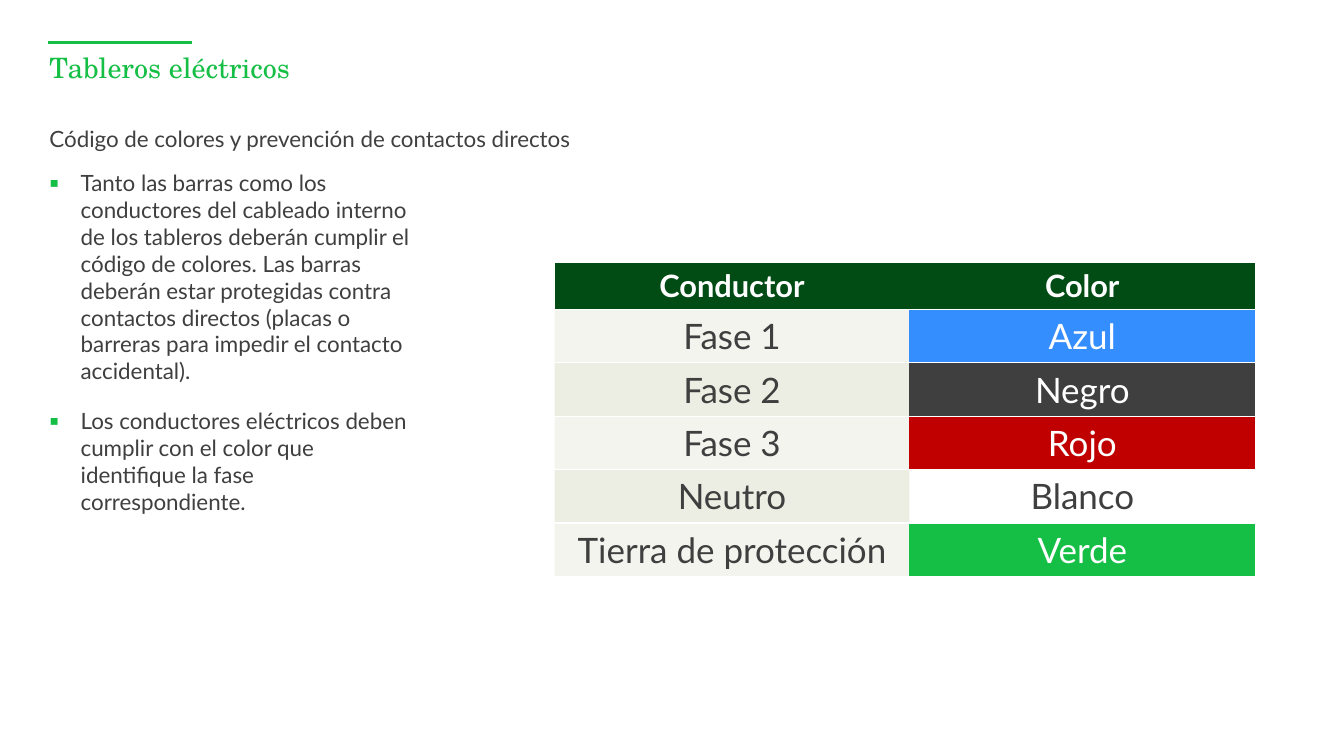
import pptx
import pptx.dml.color
import pptx.enum.shapes
import pptx.enum.text
import pptx.oxml
import pptx.oxml.ns
import pptx.util
from lxml import etree

RGBColor = pptx.dml.color.RGBColor
Inches, Pt = pptx.util.Inches, pptx.util.Pt
PP_ALIGN = pptx.enum.text.PP_ALIGN
ANCHOR = pptx.enum.text.MSO_ANCHOR
qn = pptx.oxml.ns.qn

GREEN = RGBColor(0x15, 0xBF, 0x45)
DARK_GREEN = RGBColor(0x00, 0x4C, 0x14)
SUBTITLE_GRAY = RGBColor(0x40, 0x40, 0x40)
CHARCOAL = RGBColor(0x3F, 0x3F, 0x3F)
WHITE = RGBColor(0xFF, 0xFF, 0xFF)
BLUE = RGBColor(0x34, 0x8E, 0xFE)
RED = RGBColor(0xC0, 0x00, 0x00)
SAND = RGBColor(0xE9, 0xEA, 0xDD)

TITLE = "Tableros eléctricos"
SUBTITLE = "Código de colores y prevención de contactos directos"
RULES = [
    "Tanto las barras como los conductores del cableado interno de los tableros "
    "deberán cumplir el código de colores. Las barras deberán estar protegidas "
    "contra contactos directos (placas o barreras para impedir el contacto accidental).",
    "Los conductores eléctricos deben cumplir con el color que identifique la fase "
    "correspondiente.",
]
HEADINGS = ("Conductor", "Color")
CONDUCTORS = [
    ("Fase 1", "Azul", BLUE),
    ("Fase 2", "Negro", CHARCOAL),
    ("Fase 3", "Rojo", RED),
    ("Neutro", "Blanco", None),
    ("Tierra de protección", "Verde", GREEN),
]

HEAD_FONT, TEXT_FONT = "TeX Gyre Schola", "Lato"
LEFT, TEXT_WIDTH, RULES_WIDTH = 0.49, 10.79, 3.72
TABLE_LEFT, TABLE_TOP = 5.5, 2.6
COLUMN_WIDTHS = (3.52, 3.43)
HEADING_HEIGHT, ROW_HEIGHT = 0.47, 0.53
BAND_OPACITY = (51, 80)


def add_run(paragraph, text, size, color, font=TEXT_FONT, bold=False):
    run = paragraph.add_run()
    run.text = text
    run.font.name, run.font.size, run.font.bold = font, Pt(size), bold
    run.font.color.rgb = color


def place(holder, top, width, height):
    """Position a placeholder at the left margin and return its bare text frame."""
    holder.left, holder.top = Inches(LEFT), Inches(top)
    holder.width, holder.height = Inches(width), Inches(height)
    frame = holder.text_frame
    frame.margin_left = frame.margin_right = frame.margin_top = frame.margin_bottom = 0
    frame.word_wrap = True
    frame.auto_size = pptx.enum.text.MSO_AUTO_SIZE.NONE
    frame.vertical_anchor = ANCHOR.TOP
    return frame


def format_paragraph(paragraph, spacing, before=0):
    paragraph.alignment = PP_ALIGN.LEFT
    paragraph.line_spacing = spacing
    paragraph.space_before = Pt(before)


def set_indent(paragraph, indent):
    properties = paragraph._p.get_or_add_pPr()
    properties.set("marL", str(Inches(indent)))
    properties.set("indent", str(-Inches(indent)))
    return properties


def add_bullet(paragraph):
    properties = set_indent(paragraph, 0.31)
    color = etree.SubElement(properties, qn("a:buClr"))
    etree.SubElement(color, qn("a:srgbClr"), val=str(GREEN))
    etree.SubElement(properties, qn("a:buSzPct"), val="123000")
    etree.SubElement(properties, qn("a:buChar"), char="▪")


def fill_cell(cell, text, size, text_color, fill, opacity=100, bold=False):
    cell.vertical_anchor = ANCHOR.MIDDLE
    cell.margin_left = cell.margin_right = Inches(0.11)
    cell.margin_top = cell.margin_bottom = Inches(0.05)
    properties = cell._tc.get_or_add_tcPr()
    for side in ("a:lnT", "a:lnB"):
        border = etree.SubElement(properties, qn(side), w=str(Pt(1)))
        solid = etree.SubElement(border, qn("a:solidFill"))
        etree.SubElement(solid, qn("a:srgbClr"), val=str(WHITE))
    if fill is None:
        cell.fill.background()
    else:
        cell.fill.solid()
        cell.fill.fore_color.rgb = fill
    if opacity < 100:
        shade = properties.find(qn("a:solidFill")).find(qn("a:srgbClr"))
        etree.SubElement(shade, qn("a:alpha"), val=str(opacity * 1000))
    paragraph = cell.text_frame.paragraphs[0]
    paragraph.alignment = PP_ALIGN.CENTER
    add_run(paragraph, text, size, text_color, bold=bold)


def add_color_table(slide):
    frame = slide.shapes.add_table(
        len(CONDUCTORS) + 1, len(HEADINGS), Inches(TABLE_LEFT), Inches(TABLE_TOP),
        Inches(sum(COLUMN_WIDTHS)),
        Inches(HEADING_HEIGHT + ROW_HEIGHT * len(CONDUCTORS)))
    table = frame.table
    # "No Style, No Grid"
    table._tbl.tblPr.find(qn("a:tableStyleId")).text = "{2D5ABB26-0587-4C30-8999-92F81FD0307C}"
    for column, width in zip(table.columns, COLUMN_WIDTHS):
        column.width = Inches(width)
    for index, row in enumerate(table.rows):
        row.height = Inches(ROW_HEIGHT if index else HEADING_HEIGHT)
    for column, heading in enumerate(HEADINGS):
        fill_cell(table.cell(0, column), heading, 22, WHITE, DARK_GREEN, bold=True)
    for index, (conductor, color_name, color) in enumerate(CONDUCTORS):
        fill_cell(table.cell(index + 1, 0), conductor, 25, CHARCOAL, SAND,
                  BAND_OPACITY[index % 2])
        fill_cell(table.cell(index + 1, 1), color_name, 25,
                  WHITE if color else CHARCOAL, color)


def main():
    deck = pptx.Presentation()
    deck.slide_width, deck.slide_height = Inches(13.33), Inches(7.5)
    slide = deck.slides.add_slide(deck.slide_layouts.get_by_name("Two Content"))
    title, subtitle, rules = slide.placeholders

    accent = slide.shapes.add_connector(
        pptx.enum.shapes.MSO_CONNECTOR.STRAIGHT,
        Inches(0.48), Inches(0.42), Inches(1.9), Inches(0.42))
    accent.line.color.rgb, accent.line.width = GREEN, Pt(1.75)
    etree.SubElement(accent._element.spPr, qn("a:effectLst"))

    heading = place(title, 0.54, TEXT_WIDTH, 0.7).paragraphs[0]
    format_paragraph(heading, 0.9)
    add_run(heading, TITLE, 20, GREEN, HEAD_FONT)

    topic = place(subtitle, 1.27, TEXT_WIDTH, 0.39).paragraphs[0]
    format_paragraph(topic, 0.9)
    etree.SubElement(set_indent(topic, 0), qn("a:buNone"))
    add_run(topic, SUBTITLE, 16, SUBTITLE_GRAY)

    rules_frame = place(rules, 1.68, RULES_WIDTH, 5.55)
    for index, rule in enumerate(RULES):
        paragraph = rules_frame.add_paragraph() if index else rules_frame.paragraphs[0]
        format_paragraph(paragraph, 1.0, before=16.5 if index else 0)
        add_bullet(paragraph)
        add_run(paragraph, rule, 16, CHARCOAL)

    add_color_table(slide)
    deck.save("out.pptx")


if __name__ == "__main__":
    main()
